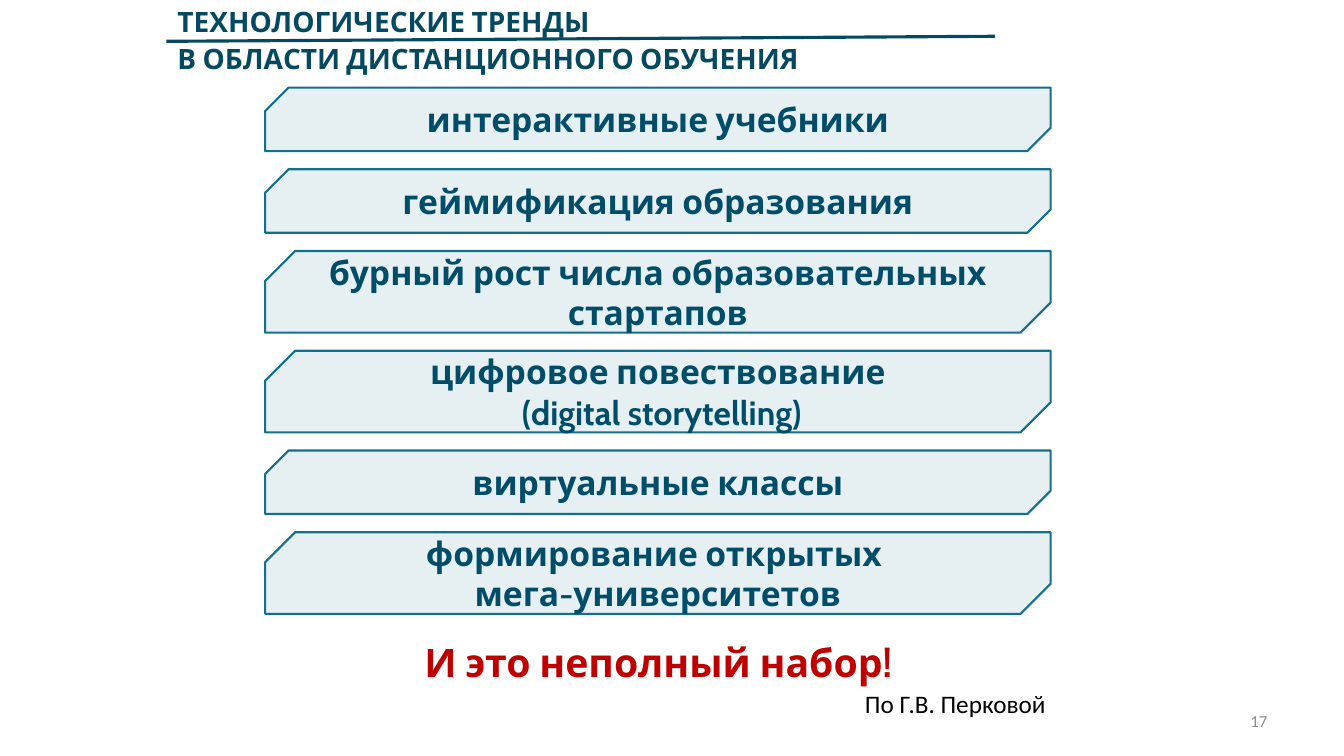
"""Build the slide on technology trends in distance learning."""
from dataclasses import dataclass
from typing import Any

import pptx
import pptx.dml.color
import pptx.enum.shapes
import pptx.enum.text
import pptx.oxml.ns
import pptx.util
from lxml import etree

Align = pptx.enum.text.PP_ALIGN
Anchor = pptx.enum.text.MSO_ANCHOR
PX = 9144


@dataclass(frozen=True)
class Theme:
    """Colours, fonts and type sizes of the slide."""
    heading: str = "054961"
    trend: str = "004D69"
    accent: str = "13708D"
    warning: str = "C00000"
    credit: str = "000000"
    muted: str = "8C8C8C"
    display_font: str = "Cabin"
    body_font: str = "Calibri"
    heading_size: int = 20
    trend_size: int = 24
    conclusion_size: int = 28
    credit_size: int = 18
    number_size: int = 12
    tint_percent: int = 10


@dataclass(frozen=True)
class Box:
    """Position and size in px."""
    left: int
    top: int
    width: int
    height: int


@dataclass(frozen=True)
class Style:
    """Type settings of one text."""
    font: str
    size: int
    colour: str
    bold: bool = False
    align: Any = Align.LEFT
    anchor: Any = Anchor.TOP
    spacing: float = 1.0
    wrap: bool = True


@dataclass(frozen=True)
class Trend:
    """One trend and the height of its plate in px."""
    wording: str
    height: int


@dataclass(frozen=True)
class Caption:
    """A free text with its place and style."""
    wording: str
    box: Box
    style: Style


THEME = Theme()
ONE_LINE, TWO_LINES = 63, 81
PLATE_LEFT, PLATE_TOP, PLATE_WIDTH, PLATE_GAP = 263, 87, 779, 18
SNIP = 0.368

TITLE = Caption(
    "ТЕХНОЛОГИЧЕСКИЕ ТРЕНДЫ\nВ ОБЛАСТИ ДИСТАНЦИОННОГО ОБУЧЕНИЯ",
    Box(166, -4, 893, 84),
    Style(THEME.display_font, THEME.heading_size, THEME.heading, bold=True, spacing=1.1),
)
TREND_STYLE = Style(THEME.display_font, THEME.trend_size, THEME.trend, bold=True,
                    align=Align.CENTER, anchor=Anchor.MIDDLE)
TRENDS = [
    Trend("интерактивные учебники", ONE_LINE),
    Trend("геймификация образования", ONE_LINE),
    Trend("бурный рост числа образовательных стартапов", TWO_LINES),
    Trend("цифровое повествование\v (digital storytelling)", TWO_LINES),
    Trend("виртуальные классы", ONE_LINE),
    Trend("формирование открытых \vмега-университетов", TWO_LINES),
]
CAPTIONS = [
    Caption("И это неполный набор!", Box(243, 628, 820, 57),
            Style(THEME.display_font, THEME.conclusion_size, THEME.warning, bold=True,
                  align=Align.CENTER)),
    Caption("По Г.В. Перковой", Box(848, 678, 202, 40),
            Style(THEME.body_font, THEME.credit_size, THEME.credit, wrap=False)),
    Caption("17", Box(956, 695, 311, 40),
            Style(THEME.body_font, THEME.number_size, THEME.muted,
                  align=Align.RIGHT, anchor=Anchor.MIDDLE)),
]


def apply(target: Any, values: dict[str, Any]) -> None:
    """Set each named attribute on the target."""
    for name, value in values.items():
        setattr(target, name, value)


def rgb(colour: str) -> pptx.dml.color.RGBColor:
    """Turn a hex string into a colour."""
    return pptx.dml.color.RGBColor.from_string(colour)


def emu(box: Box) -> tuple[int, int, int, int]:
    """Scale a box from px to EMU."""
    return box.left * PX, box.top * PX, box.width * PX, box.height * PX


def write(frame: Any, wording: str, style: Style) -> None:
    """Put styled wording into a text frame."""
    frame.text = wording
    apply(frame, {"auto_size": pptx.enum.text.MSO_AUTO_SIZE.NONE,
                  "word_wrap": style.wrap, "vertical_anchor": style.anchor})
    for paragraph in frame.paragraphs:
        apply(paragraph, {"alignment": style.align, "line_spacing": style.spacing})
        for run in paragraph.runs:
            apply(run.font, {"name": style.font, "size": pptx.util.Pt(style.size),
                             "bold": style.bold})
            run.font.color.rgb = rgb(style.colour)


def add_title(slide: Any, title: Caption) -> None:
    """Move and format the title placeholder."""
    heading = slide.shapes.title
    apply(heading, dict(zip(("left", "top", "width", "height"), emu(title.box))))
    write(heading.text_frame, title.wording, title.style)


def add_underline(slide: Any) -> None:
    """Draw the slightly rising rule between the title lines."""
    underline = slide.shapes.add_connector(
        pptx.enum.shapes.MSO_CONNECTOR.STRAIGHT, 165 * PX, 41 * PX, 987 * PX, 36 * PX)
    underline.line.color.rgb = rgb(THEME.heading)
    underline.line.width = pptx.util.Pt(2.25)
    etree.SubElement(underline._element.spPr, pptx.oxml.ns.qn("a:effectLst"))


def add_plate(slide: Any, trend: Trend, top: int) -> None:
    """Draw one snipped plate with its trend."""
    box = Box(PLATE_LEFT, top, PLATE_WIDTH, trend.height)
    plate = slide.shapes.add_shape(
        pptx.enum.shapes.MSO_SHAPE.SNIP_2_DIAG_RECTANGLE, *emu(box))
    plate.shadow.inherit = False
    plate.adjustments[0] = SNIP
    plate.adjustments[1] = 0
    plate.fill.solid()
    plate.fill.fore_color.rgb = rgb(THEME.accent)
    tint = plate._element.spPr.find(".//" + pptx.oxml.ns.qn("a:srgbClr"))
    etree.SubElement(tint, pptx.oxml.ns.qn("a:alpha"), val=str(THEME.tint_percent * 1000))
    plate.line.color.rgb = rgb(THEME.accent)
    plate.line.width = pptx.util.Pt(1.5)
    write(plate.text_frame, trend.wording, TREND_STYLE)


def add_caption(slide: Any, caption: Caption) -> None:
    """Add one free text."""
    textbox = slide.shapes.add_textbox(*emu(caption.box))
    write(textbox.text_frame, caption.wording, caption.style)


def main() -> None:
    """Build and save the presentation."""
    deck = pptx.Presentation()
    apply(deck, {"slide_width": 1333 * PX, "slide_height": 750 * PX})
    slide = deck.slides.add_slide(deck.slide_layouts.get_by_name("Title Only"))
    add_title(slide, TITLE)
    add_underline(slide)
    top = PLATE_TOP
    for trend in TRENDS:
        add_plate(slide, trend, top)
        top += trend.height + PLATE_GAP
    for caption in CAPTIONS:
        add_caption(slide, caption)
    deck.save("out.pptx")


if __name__ == "__main__":
    main()
